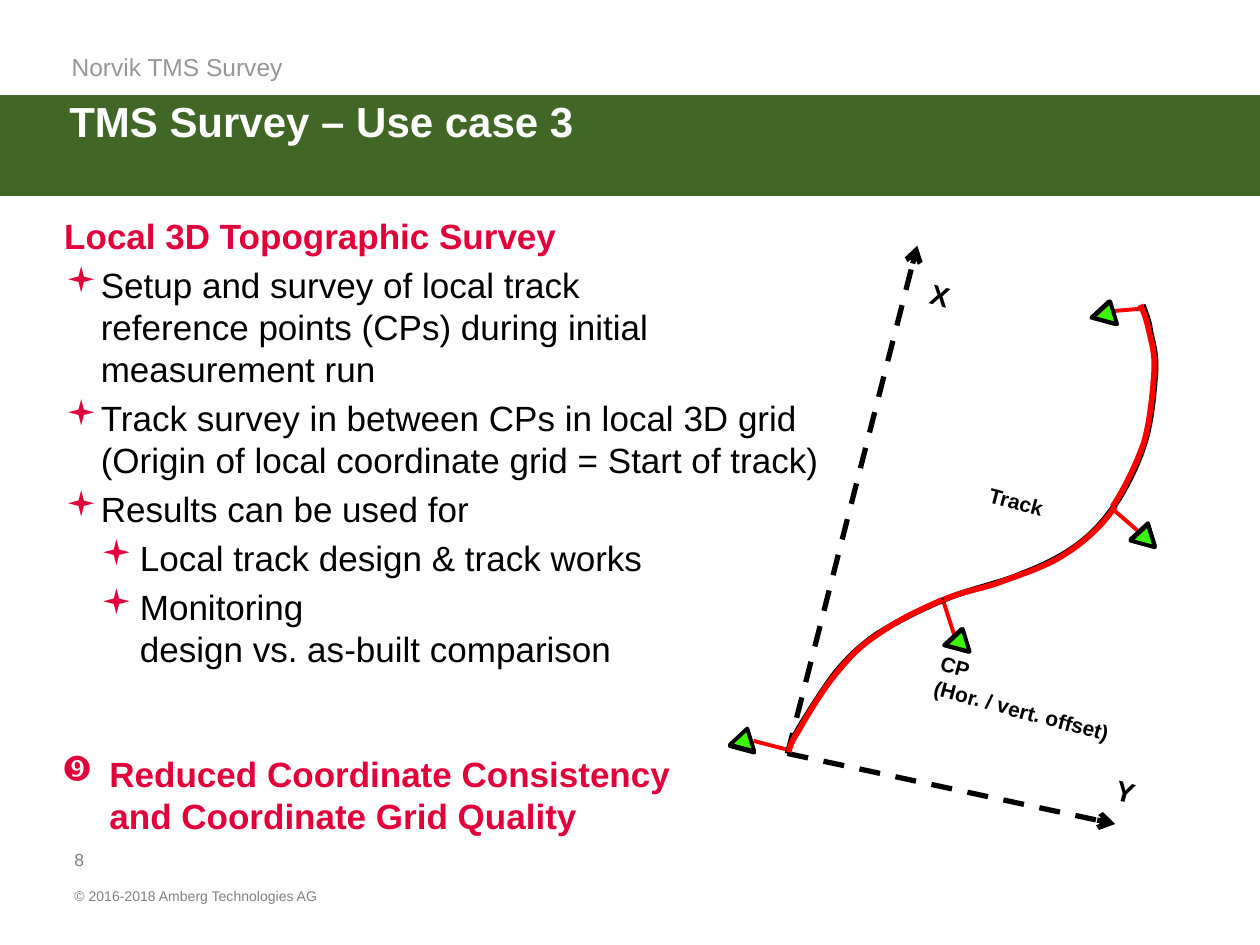
from pptx import Presentation
from pptx import util as u
from pptx.dml.color import RGBColor
from pptx.enum import dml, shapes
from pptx.oxml import parse_xml
from pptx.oxml.ns import nsdecls, qn

deck = Presentation()
deck.slide_width, deck.slide_height = u.Inches(10), u.Inches(7.5)
slide = deck.slides.add_slide(deck.slide_layouts[6])
art = slide.shapes
col, row = deck.slide_width / 100, deck.slide_height / 75
RED, PINK, BLACK, GREEN = "FF0000", "E2003B", "000000", "416727"


def hue(code):
    return RGBColor.from_string(code)


def write(area, lines, size, color, bold=False, pad=True, wrap=True, turn=0):
    x, y, w, h = area
    box = art.add_textbox(int(x * col), int(y * row), int(w * col), int(h * row))
    box.rotation = turn
    frame = box.text_frame
    frame.word_wrap = wrap
    if not pad:
        frame.margin_left = frame.margin_right = 0
        frame.margin_top = frame.margin_bottom = 0
    frame.text = "\n".join(lines)
    for para in frame.paragraphs:
        for run in para.runs:
            run.font.name, run.font.size = "Arial", u.Pt(size)
            run.font.bold, run.font.color.rgb = bold, hue(color)
    return frame.paragraphs


bar = art.add_shape(shapes.MSO_SHAPE.RECTANGLE, 0, int(7.6 * row),
                    int(100 * col), int(7.9 * row))
bar.shadow.inherit = False
bar.fill.solid()
bar.fill.fore_color.rgb = bar.line.color.rgb = hue(GREEN)
bar.line.width = u.Pt(0.75)

write((4.7, 3.6, 89.8, 3.9), ["Norvik TMS Survey"], 14, "969696")
write((5.5, 7.6, 89.4, 7.9), ["TMS Survey – Use case 3"], 24, "FFFFFF", True, False)
write((5.9, 70.4, 25.2, 2.2), ["© 2016-2018 Amberg Technologies AG"], 8, "808080", pad=False)
write((5.9, 67.4, 6.7, 2.7), ["8"], 10, "808080", pad=False)

body = write((5.1, 17, 60.2, 43.3), [
    "Local 3D Topographic Survey",
    "Setup and survey of local track\vreference points (CPs) during initial measurement run",
    "Track survey in between CPs in local 3D grid\v"
    "(Origin of local coordinate grid = Start of track)",
    "Results can be used for",
    "Local track design & track works",
    "Monitoring\vdesign vs. as-built comparison",
], 20, BLACK, pad=False)
for run in body[0].runs:
    run.font.bold, run.font.color.rgb = True, hue(PINK)
for para in body[1:]:
    para.space_before = u.Pt(4)
goal = write((3.9, 59.2, 50.8, 7.7),
             ["Reduced Coordinate Consistency\vand Coordinate Grid Quality"],
             20, PINK, True, wrap=False)

marks = [(para, 1, 2.9, 2.8, "▪") for para in body[1:4]]
marks += [(para, 2, 6, 3.1, "▪") for para in body[4:]]
marks += [(goal[0], 1, 3.8, 3.8, "➔")]
for para, level, left, hang, sign in marks:
    para.level = level
    prop = para._p.get_or_add_pPr()
    prop.set("marL", str(int(left * col)))
    prop.set("indent", str(int(-hang * col)))
    for tag in (f'buClr {nsdecls("a")}><a:srgbClr val="{PINK}"/></a:buClr>',
                f'buFont {nsdecls("a")} typeface="Wingdings" charset="2"/>',
                f'buChar {nsdecls("a")} char="{sign}"/>'):
        prop.append(parse_xml("<a:" + tag))

links = []
for x, y in [(72.8, 19.5), (88.5, 65.4)]:
    axis = art.add_connector(shapes.MSO_CONNECTOR.STRAIGHT, int(62.5 * col),
                             int(59.8 * row), int(x * col), int(y * row))
    axis.line.color.rgb, axis.line.width = hue(BLACK), u.Pt(3)
    axis.line.dash_style = dml.MSO_LINE.DASH
    axis.element.spPr.find(qn("a:ln")).append(
        parse_xml(f'<a:tailEnd {nsdecls("a")} type="arrow"/>'))
    links.append(axis)

points = [
    ((62.5, 59.5), (59.8, 58.8), (58.1, 57.9), (58.1, 57.8)),
    ((74.8, 47.5), (75.8, 50.6), (75.1, 49.9), (75.2, 49.9)),
    ((88.3, 40.4), (90.5, 42.3), (89.9, 41.5), (89.9, 41.6)),
    ((90.6, 24.5), (88.2, 24.7), (86.8, 23.9), (86.9, 23.9)),
]
for start, end, back, front in points:
    group = art.add_group_shape()
    tie = group.shapes.add_connector(
        shapes.MSO_CONNECTOR.STRAIGHT, int(start[0] * col), int(start[1] * row),
        int(end[0] * col), int(end[1] * row))
    tie.line.color.rgb, tie.line.width = hue(RED), u.Pt(2.25)
    links.append(tie)
    for (x, y), color in [(back, "FFFFFF"), (front, "3BF600")]:
        peg = group.shapes.add_shape(shapes.MSO_SHAPE.ISOSCELES_TRIANGLE, int(x * col),
                                     int(y * row), int(2 * col), int(1.6 * row))
        peg.rotation = 15
        peg.shadow.inherit = False
        peg.fill.solid()
        peg.fill.fore_color.rgb = hue(color)
        peg.line.color.rgb, peg.line.width = hue(BLACK), u.Pt(2.25)
for link in links:
    link.element.spPr.append(parse_xml(f'<a:effectLst {nsdecls("a")}/>'))

curves = [
    (BLACK, [(62.5, 59.8), (62.8, 58.9), (62.8, 58.9), (63.4, 57.8),
             (64, 56.8), (65.3, 54.7), (66.3, 53.4), (67.3, 52.2), (68.1, 51.4), (69.5, 50.4),
             (70.9, 49.5), (72.8, 48.5), (74.7, 47.7), (76.7, 46.8), (79.4, 46.3), (81.2, 45.5),
             (83, 44.8), (84.4, 44.1), (85.7, 43.1), (87, 42.1), (87.9, 41), (88.8, 39.6),
             (89.6, 38.3), (90.4, 36.7), (90.9, 35), (91.4, 33.4), (91.6, 31), (91.7, 29.6),
             (91.8, 28.1), (91.5, 27.2), (91.3, 26.3), (91.2, 25.4), (90.9, 24.8), (90.7, 24.2)]),
    (RED, [(62.6, 59.7), (62.8, 58.8), (62.9, 58.8), (63.5, 57.8),
           (64.1, 56.7), (65.4, 54.6), (66.4, 53.4), (67.4, 52.2), (68.2, 51.3), (69.6, 50.4),
           (71, 49.4), (72.1, 48.8), (74.8, 47.6)]),
    (RED, [(74.9, 47.6), (76.8, 46.8), (77.8, 46.8), (79.4, 46.2),
           (81, 45.6), (83, 45), (84.5, 44), (86.1, 43), (87.6, 41.6), (88.5, 40.2)]),
    (RED, [(88.3, 40.2), (89.2, 38.9), (90.2, 36.8), (90.8, 35.1),
           (91.3, 33.3), (91.5, 31), (91.6, 29.6), (91.7, 28.1), (91.4, 27.2), (91.2, 26.3),
           (91, 25.4), (90.8, 24.8), (90.5, 24.2)]),
]
for color, knots in curves:
    trail = [(int(x * col), int(y * row)) for x, y in knots]
    pen = art.build_freeform(*trail[0])
    pen.add_line_segments(trail[1:], close=False)
    track = pen.convert_to_shape()
    track.shadow.inherit = False
    track.fill.background()
    track.line.color.rgb, track.line.width = hue(color), u.Pt(3.25)
    route = next(track.element.iter(qn("a:path")))
    parts = route.findall(qn("a:lnTo"))
    for first in range(0, len(parts), 3):
        bend = parse_xml(f'<a:cubicBezTo {nsdecls("a")}/>')
        for part in parts[first:first + 3]:
            bend.append(part[0])
            route.remove(part)
        route.append(bend)

for area, lines, size in [
    ((73.2, 53, 16.9, 5), ["CP", "(Hor. / vert. offset)"], 12),
    ((87.6, 61, 3.5, 3.7), ["Y"], 16),
    ((77.5, 38.3, 6.4, 3), ["Track"], 12),
    ((72.9, 21.6, 3.5, 3.7), ["X"], 16),
]:
    write(area, lines, size, BLACK, True, wrap=False, turn=15)

deck.save("out.pptx")
